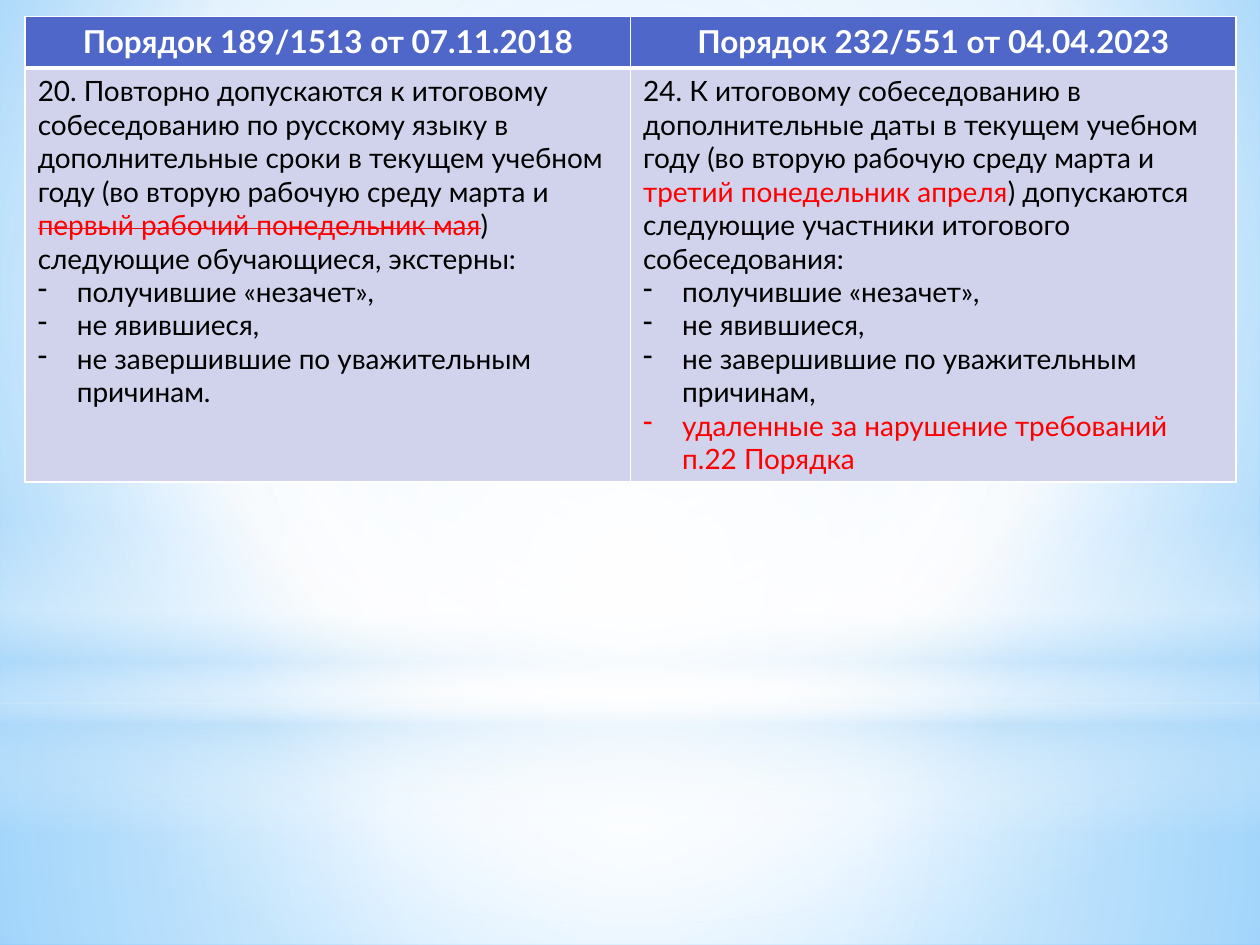
from lxml import etree
from pptx import Presentation, util as u
from pptx.dml.color import RGBColor
from pptx.enum import shapes, text
from pptx.oxml.ns import qn

WHITE = RGBColor(0xFF, 0xFF, 0xFF)
BLACK = RGBColor(0, 0, 0)
RED = RGBColor(0xFF, 0, 0)
HEADER_BLUE = RGBColor(0x4E, 0x67, 0xC8)
BODY_LILAC = RGBColor(0xD0, 0xD3, 0xEB)
SKY = RGBColor(0x9E, 0xD5, 0xFF)
DEEP_SKY = RGBColor(0x5B, 0xB9, 0xFF)
PALE_SKY = RGBColor(0xB4, 0xDC, 0xFA)

CENTRE = (50, 50, 50, 50)
RECT, OVAL = shapes.MSO_SHAPE.RECTANGLE, shapes.MSO_SHAPE.OVAL

# A text is a list of (words, colour, struck out) runs.
ORDERS = [
    ("Порядок 189/1513 от 07.11.2018",
     [("20. Повторно допускаются к итоговому собеседованию по русскому языку в "
       "дополнительные сроки в текущем учебном году (во вторую рабочую среду марта и ",
       BLACK, False),
      ("первый рабочий понедельник мая", RED, True),
      (") следующие обучающиеся, экстерны:", BLACK, False)],
     [("получившие «незачет»,", BLACK),
      ("не явившиеся,", BLACK),
      ("не завершившие по уважительным причинам.", BLACK)]),
    ("Порядок 232/551 от 04.04.2023",
     [("24. К итоговому собеседованию в дополнительные даты в текущем учебном году "
       "(во вторую рабочую среду марта и ", BLACK, False),
      ("третий понедельник апреля", RED, False),
      (") допускаются следующие участники итогового собеседования:", BLACK, False)],
     [("получившие «незачет»,", BLACK),
      ("не явившиеся,", BLACK),
      ("не завершившие по уважительным причинам,", BLACK),
      ("удаленные за нарушение требований п.22 Порядка", RED)]),
]


def child(parent, tag, **attributes):
    return etree.SubElement(parent, qn(tag), {k: str(v) for k, v in attributes.items()})


class ComparisonSlide:
    font = "Lato"
    header_size, body_size = u.Pt(18), u.Pt(16)
    indent = u.Inches(0.31)

    def __init__(self, deck):
        self.width, self.height = deck.slide_width, deck.slide_height
        self.slide = deck.slides.add_slide(deck.slide_layouts[6])

    def gradient(self, fill, properties, stops, focus=None):
        """Stops are (position, colour, opacity) in percent; without a focus it runs downwards."""
        fill.solid()
        solid = properties.find(qn("a:solidFill"))
        grad = etree.Element(qn("a:gradFill"), rotWithShape="1")
        stop_list = child(grad, "a:gsLst")
        for position, colour, opacity in stops:
            stop = child(stop_list, "a:gs", pos=position * 1000)
            child(child(stop, "a:srgbClr", val=colour), "a:alpha", val=opacity * 1000)
        if focus:
            sides = {side: share * 1000 for side, share in zip("ltrb", focus)}
            child(child(grad, "a:path", path="circle"), "a:fillToRect", **sides)
        else:
            child(grad, "a:lin", ang=90 * 60000, scaled=0)
        properties.replace(solid, grad)

    def background(self, stops, focus):
        background = self.slide.background
        fill = background.fill
        fill.solid()
        self.gradient(fill, self.slide._element.cSld.bg.bgPr, stops, focus)

    def glow(self, preset, top, height, stops, focus=None):
        """Full-width veil; top and height are shares of the slide's height."""
        veil = self.slide.shapes.add_shape(
            preset, 0, int(top * self.height), self.width, int(height * self.height))
        veil.shadow.inherit = False
        veil.line.fill.background()
        self.gradient(veil.fill, veil._element.spPr, stops, focus)

    def run(self, paragraph, words, colour, struck=False):
        run = paragraph.add_run()
        run.text = words
        run.font.color.rgb = colour
        if struck:
            run._r.get_or_add_rPr().set("strike", "sngStrike")

    def style(self, paragraph, size, bold=False):
        paragraph.font.name, paragraph.font.size = self.font, size
        paragraph.font.bold = bold
        for run in paragraph.runs:
            run.font.name, run.font.size, run.font.bold = self.font, size, bold

    def bullet(self, paragraph):
        properties = paragraph._p.get_or_add_pPr()
        properties.set("marL", str(self.indent))
        properties.set("indent", str(-self.indent))
        child(properties, "a:buChar", char="-")

    def paint(self, cell, colour, bottom):
        cell.fill.solid()
        cell.fill.fore_color.rgb = colour
        properties = cell._tc.get_or_add_tcPr()
        for place, (side, points) in enumerate(zip("LRTB", (1, 1, 1, bottom))):
            line = etree.Element(qn(f"a:ln{side}"), w=str(u.Pt(points)))
            child(child(line, "a:solidFill"), "a:srgbClr", val=WHITE)
            properties.insert(place, line)

    def header(self, cell, title):
        self.paint(cell, HEADER_BLUE, bottom=3)
        paragraph = cell.text_frame.paragraphs[0]
        paragraph.alignment = text.PP_ALIGN.CENTER
        self.run(paragraph, title, WHITE)
        self.style(paragraph, self.header_size, bold=True)

    def body(self, cell, clause, items):
        self.paint(cell, BODY_LILAC, bottom=1)
        frame = cell.text_frame
        paragraph = frame.paragraphs[0]
        for part in clause:
            self.run(paragraph, *part)
        self.style(paragraph, self.body_size)
        for words, colour in items:
            paragraph = frame.add_paragraph()
            self.run(paragraph, words, colour)
            self.style(paragraph, self.body_size)
            self.bullet(paragraph)

    def table(self, orders, left, top, width, row_heights):
        table = self.slide.shapes.add_table(
            len(row_heights), len(orders), u.Inches(left), u.Inches(top),
            u.Inches(width), u.Inches(sum(row_heights))).table
        table.horz_banding = False
        for row, height in zip(table.rows, row_heights):
            row.height = u.Inches(height)
        for column, (title, clause, items) in enumerate(orders):
            self.header(table.cell(0, column), title)
            self.body(table.cell(1, column), clause, items)


def main():
    deck = Presentation()
    deck.slide_width, deck.slide_height = u.Inches(10), u.Inches(7.5)
    page = ComparisonSlide(deck)

    page.background([(0, SKY, 100), (60, WHITE, 100), (100, DEEP_SKY, 100)], (20, 10, 20, 60))
    horizon = 0.744
    page.glow(RECT, horizon, 1 - horizon,
              [(0, WHITE, 91), (37, WHITE, 76), (100, PALE_SKY, 79)], CENTRE)
    page.glow(RECT, 0, horizon,
              [(0, WHITE, 89), (48, WHITE, 62), (100, PALE_SKY, 79)], CENTRE)
    page.glow(RECT, 0.55, 1 / 3,
              [(0, WHITE, 0), (29, WHITE, 30), (45, PALE_SKY, 40),
               (55, WHITE, 26), (65, PALE_SKY, 60), (100, WHITE, 0)])
    page.glow(OVAL, 0.233, horizon, [(0, WHITE, 100), (56, WHITE, 0)], CENTRE)

    page.table(ORDERS, left=0.2, top=0.13, width=9.61, row_heights=(0.41, 3.28))
    deck.save("out.pptx")


if __name__ == "__main__":
    main()
